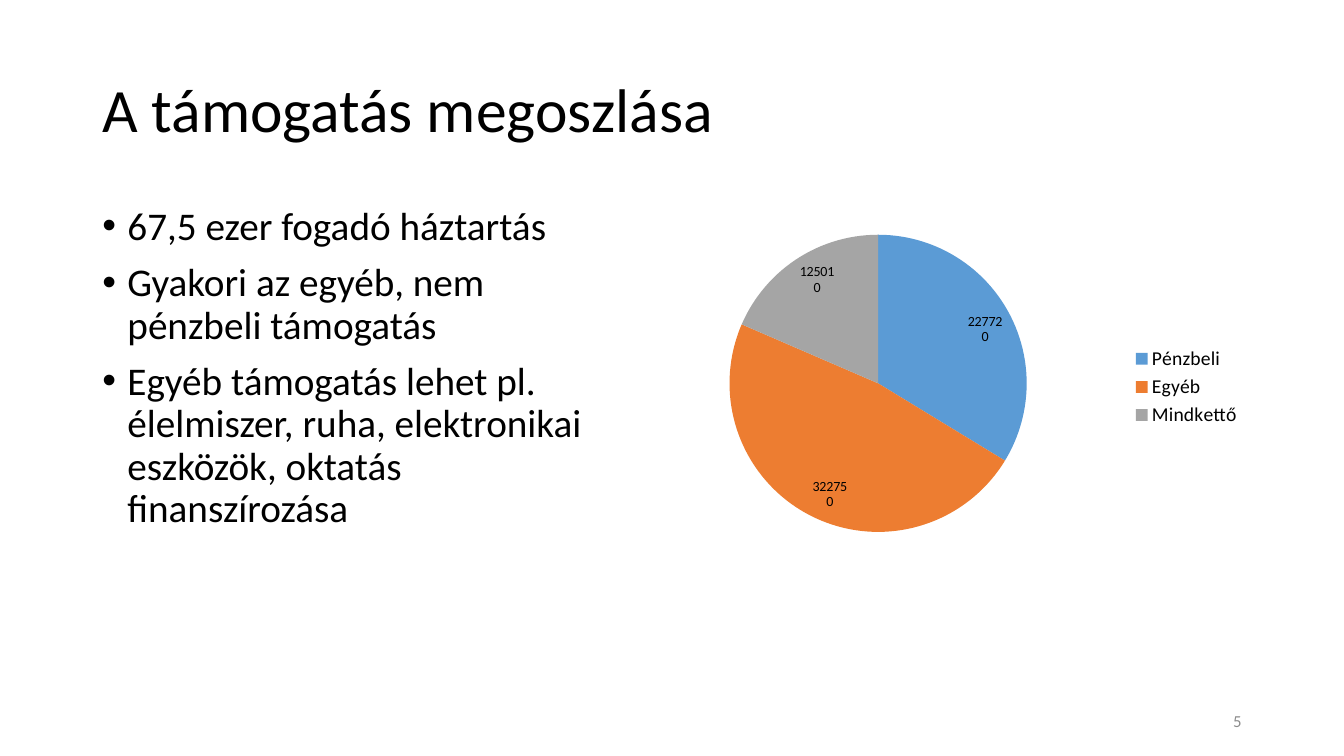
import pptx
import pptx.chart.data
import pptx.dml.color
import pptx.enum.chart
import pptx.enum.text
import pptx.oxml
import pptx.oxml.ns
import pptx.util

PX = 9525
FONT = "Calibri"
BLACK = "000000"
GRAY = "8C8C8C"
SHARES = {
    "Pénzbeli": (22772, "5B9BD5"),
    "Egyéb": (32275, "ED7D31"),
    "Mindkettő": (12501, "A5A5A5"),
}
POINTS = (
    "67,5 ezer fogadó háztartás",
    "Gyakori az egyéb, nem pénzbeli támogatás",
    "Egyéb támogatás lehet pl. élelmiszer, ruha, elektronikai eszközök, "
    "oktatás finanszírozása",
)


def rgb(color):
    return pptx.dml.color.RGBColor.from_string(color)


def style_font(font, size, color=BLACK):
    font.name = FONT
    font.size = pptx.util.Pt(size)
    font.color.rgb = rgb(color)


def add_bullet(paragraph, indent):
    properties = paragraph._p.get_or_add_pPr()
    properties.set("marL", str(indent * PX))
    properties.set("indent", str(-indent * PX))
    for tag, name, value in (("buFont", "typeface", "Arial"), ("buChar", "char", "•")):
        element = properties.makeelement(pptx.oxml.ns.qn(f"a:{tag}"), {name: value})
        properties.append(element)


def write_paragraph(paragraph, text, size, color=BLACK, align="LEFT",
                    line_spacing=1.0, space_before=0, bullet_indent=0):
    if bullet_indent:
        add_bullet(paragraph, bullet_indent)
    paragraph.alignment = getattr(pptx.enum.text.PP_ALIGN, align)
    paragraph.line_spacing = line_spacing
    paragraph.space_before = pptx.util.Pt(space_before)
    run = paragraph.add_run()
    run.text = text
    style_font(run.font, size, color)


class SlideBuilder:
    def __init__(self, presentation):
        self.slide = presentation.slides.add_slide(presentation.slide_layouts[6])

    def text(self, box, paragraphs, anchor="MIDDLE", space_between=0, **style):
        shape = self.slide.shapes.add_textbox(*(value * PX for value in box))
        frame = shape.text_frame
        frame.word_wrap = True
        frame.vertical_anchor = getattr(pptx.enum.text.MSO_ANCHOR, anchor)
        for index, text in enumerate(paragraphs):
            paragraph = frame.add_paragraph() if index else frame.paragraphs[0]
            write_paragraph(paragraph, text,
                            space_before=space_between if index else 0, **style)

    def pie(self, box, shares, plot_box):
        data = pptx.chart.data.CategoryChartData()
        data.categories = list(shares)
        data.add_series("Series 1", [value for value, color in shares.values()])
        chart = self.slide.shapes.add_chart(
            pptx.enum.chart.XL_CHART_TYPE.PIE, *(value * PX for value in box), data
        ).chart
        chart.has_title = False
        style_font(chart.font, 10)

        # Legend
        chart.has_legend = True
        chart.legend.position = pptx.enum.chart.XL_LEGEND_POSITION.RIGHT
        chart.legend.include_in_layout = False
        style_font(chart.legend.font, 14)

        # Slices
        plot = chart.plots[0]
        plot.vary_by_categories = True
        series = plot.series[0]
        for index, (value, color) in enumerate(shares.values()):
            fill = series.points[index].format.fill
            fill.solid()
            fill.fore_color.rgb = rgb(color)

        # Labels: value above percentage
        labels = series.data_labels
        labels.show_value = True
        labels.show_percentage = True
        labels.number_format = "#,##0"
        labels.number_format_is_linked = False
        labels.position = pptx.enum.chart.XL_LABEL_POSITION.INSIDE_END
        style_font(labels.font, 10)
        qn = pptx.oxml.ns.qn
        separator = labels._element.makeelement(qn("c:separator"), {})
        separator.text = "\n"
        labels._element.find(qn("c:showBubbleSize")).addnext(separator)

        # Plot placement, as fractions of the chart
        area = chart._chartSpace.chart.plotArea
        for layout in area.findall(qn("c:layout")):
            area.remove(layout)
        settings = [("layoutTarget", "inner"), ("xMode", "edge"), ("yMode", "edge")]
        settings += zip("xywh", plot_box)
        values = "".join(f'<c:{tag} val="{value}"/>' for tag, value in settings)
        area.insert(0, pptx.oxml.parse_xml(
            f'<c:layout {pptx.oxml.ns.nsdecls("c")}>'
            f"<c:manualLayout>{values}</c:manualLayout></c:layout>"
        ))


def main():
    presentation = pptx.Presentation()
    presentation.slide_width = 1280 * PX
    presentation.slide_height = 720 * PX
    builder = SlideBuilder(presentation)

    # Title
    builder.text((88, 38, 1104, 139), ["A támogatás megoszlása"],
                 size=44, line_spacing=0.9)
    # Key points
    builder.text((88, 192, 480, 457), POINTS, anchor="TOP", size=28,
                 line_spacing=0.9, space_between=10, bullet_indent=24)
    # Distribution of support
    builder.pie((568, 200, 624, 337), SHARES, (0.18, 0.07, 0.5, 0.84))
    # Slide number
    builder.text((904, 667, 288, 38), ["5"], size=12, color=GRAY, align="RIGHT")

    presentation.save("out.pptx")


if __name__ == "__main__":
    main()
